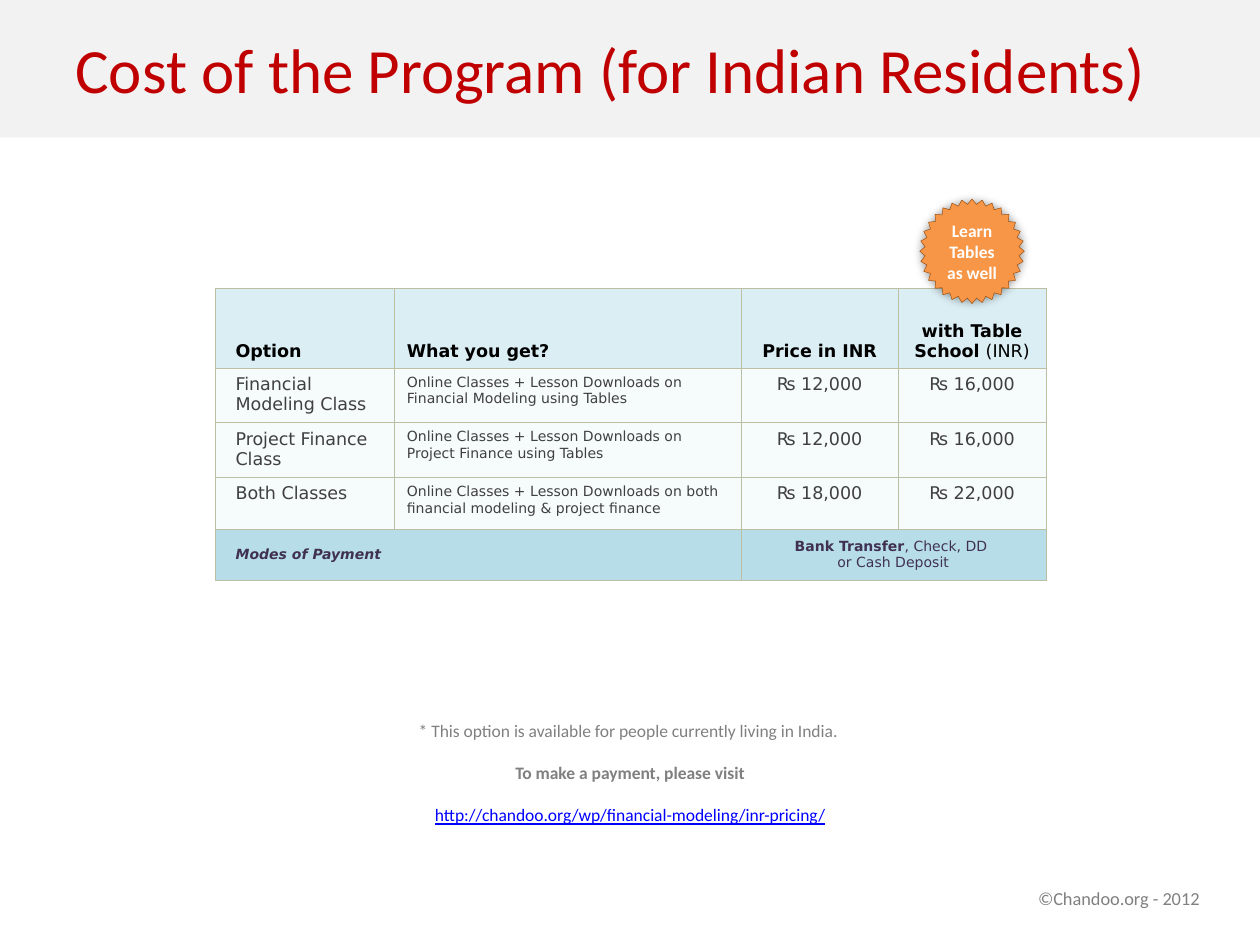
from lxml import etree
from pptx import Presentation, util as u
from pptx.dml.color import RGBColor
from pptx.enum import shapes, text
from pptx.oxml import parse_xml
from pptx.oxml.ns import nsdecls

THEME = {
    "sans": "Calibri", "table": "DejaVu Sans",
    "title": 36, "body": 10, "small": 8, "footer": 10.5,
    "red": "C00000", "band": "F2F2F2", "grey": "808080", "link": "0000FF",
    "black": "000000", "dark": "404040", "purple": "403152", "white": "FFFFFF",
    "head": "DBEEF4", "row": "F6FBFC", "foot": "B7DEE8", "border": "BDBFA2",
    "orange": "F79646", "brown": "984807",
}
LEFT, CENTER = text.PP_ALIGN.LEFT, text.PP_ALIGN.CENTER
TOP, MIDDLE, BOTTOM = (text.MSO_ANCHOR.TOP, text.MSO_ANCHOR.MIDDLE,
                       text.MSO_ANCHOR.BOTTOM)


def grid(*cells):
    """Lengths on a grid of 100 columns by 75 rows."""
    return [u.Inches(cell / 10) for cell in cells]


def write(frame, paragraphs, face, size, color, align=LEFT, spacing=None):
    """Each paragraph is a list of (words, font changes); a newline breaks a line."""
    for index, runs in enumerate(paragraphs):
        para = frame.add_paragraph() if index else frame.paragraphs[0]
        para.alignment, para.line_spacing = align, spacing
        for words, changes in runs:
            style = {"name": THEME[face], "size": u.Pt(THEME[size]), **changes}
            tint = style.pop("color", color)
            for number, line in enumerate(words.split("\n")):
                if number:
                    para.add_line_break()
                span = para.add_run()
                span.text = line
                span.font.color.rgb = RGBColor.from_string(THEME[tint])
                for name, value in style.items():
                    setattr(span.font, name, value)


deck = Presentation()
deck.slide_width, deck.slide_height = grid(100, 75)
page = deck.slides.add_slide(deck.slide_layouts[6])

# Title band
band = page.shapes.add_shape(shapes.MSO_SHAPE.RECTANGLE, *grid(0, 0, 100, 10.9))
band.shadow.inherit = False
band.fill.solid()
band.fill.fore_color.rgb = RGBColor.from_string(THEME["band"])
band.line.fill.background()

# Title, payment note and footer
BOLD = {"bold": True}
text_boxes = [
    ((5, 0, 90, 10.9), True, MIDDLE, "title", "red", LEFT, None,
     [[("Cost of the Program (for Indian Residents)", {})]]),
    ((32, 55, 36, 11.1), False, TOP, "body", "grey", CENTER, 2,
     [[("* This option is available for people currently living in India. \n", {}),
       ("To make a payment, please visit", BOLD)],
      [("http://chandoo.org/wp/financial-modeling/inr-pricing/",
        {"color": "link", "underline": True})]]),
    ((81.4, 69.9, 15.1, 2.8), False, TOP, "footer", "grey", LEFT, None,
     [[("©Chandoo.org - 2012", {})]]),
]
for place, wrap, anchor, size, color, align, spacing, paragraphs in text_boxes:
    frame = page.shapes.add_textbox(*grid(*place)).text_frame
    frame.word_wrap, frame.vertical_anchor = wrap, anchor
    write(frame, paragraphs, "sans", size, color, align, spacing)

# Price table: contents
header = [[("Option", BOLD)], [("What you get?", BOLD)], [("Price in INR", BOLD)],
          [("with Table School ", BOLD), ("(INR)", {})]]
offers = [
    ("Financial Modeling Class", "on Financial Modeling using Tables", "12,000", "16,000"),
    ("Project Finance Class", "on Project Finance using Tables", "12,000", "16,000"),
    ("Both Classes", "on both financial modeling & project finance", "18,000", "22,000"),
]
small = {"size": u.Pt(THEME["small"])}
rows = [header]
for option, detail, price, bundle in offers:
    rows.append([[(option, {})],
                 [("Online Classes + Lesson Downloads " + detail, small)],
                 [("₨ " + price, {})], [("₨ " + bundle, {})]])
rows.append([[("Modes of Payment", {**small, "bold": True, "italic": True})], [],
             [("Bank Transfer", {**small, "bold": True}),
              (", Check, DD \nor Cash Deposit", small)], []])
row_styles = ([("head", "black", BOTTOM)] + [("row", "dark", TOP)] * len(offers)
              + [("foot", "purple", MIDDLE)])

# Price table: grid
widths, heights = grid(14.2, 27.5, 12.5, 11.7), grid(6.3, 4.1, 4.1, 4.1, 4.1)
left, top = grid(17.1, 22.9)
prices = page.shapes.add_table(len(rows), len(widths), left, top,
                               sum(widths), sum(heights)).table
for column, width in zip(prices.columns, widths):
    column.width = width
for row, height in zip(prices.rows, heights):
    row.height = height
for first in (0, 2):
    prices.cell(4, first).merge(prices.cell(4, first + 1))

# Price table: cells
for r, (row, (fill, color, anchor)) in enumerate(zip(rows, row_styles)):
    for c, runs in enumerate(row):
        cell = prices.cell(r, c)
        properties = cell._tc.get_or_add_tcPr()
        for side in "LRTB":
            properties.append(parse_xml(
                f'<a:ln{side} {nsdecls("a")} w="3175"><a:solidFill>'
                f'<a:srgbClr val="{THEME["border"]}"/></a:solidFill></a:ln{side}>'))
        cell.fill.solid()
        cell.fill.fore_color.rgb = RGBColor.from_string(THEME[fill])
        cell.vertical_anchor = anchor
        if runs:
            write(cell.text_frame, [runs], "table", "body", color,
                  CENTER if c > 1 else LEFT)
        if c == 0:
            indent = cell.text_frame.paragraphs[0]._p.get_or_add_pPr()
            indent.set("marL", str(u.Inches(0.06)))
            indent.set("indent", "0")

# Star badge over the last column
badge = page.shapes.add_shape(shapes.MSO_SHAPE.STAR_32_POINT,
                              *grid(73, 15.8, 8.3, 8.3))
badge.adjustments[0] = 0.45
badge.fill.solid()
badge.fill.fore_color.rgb = RGBColor.from_string(THEME["orange"])
badge.line.color.rgb = RGBColor.from_string(THEME["brown"])
badge.line.width = u.Pt(0.25)
badge.shadow.inherit = False
effects = badge._element.spPr.find("{*}effectLst")
effects.append(etree.fromstring(
    f'<a:outerShdw {nsdecls("a")} blurRad="{u.Pt(5)}" dist="0" dir="0">'
    f'<a:srgbClr val="{THEME["black"]}"><a:alpha val="40000"/></a:srgbClr>'
    '</a:outerShdw>'))
frame = badge.text_frame
for name, value in {"margin_left": 0, "margin_right": 0, "margin_top": 0,
                    "margin_bottom": 0, "word_wrap": True,
                    "vertical_anchor": MIDDLE}.items():
    setattr(frame, name, value)
write(frame, [[("Learn Tables\nas well", BOLD)]], "sans", "body", "white", CENTER)

deck.save("out.pptx")
